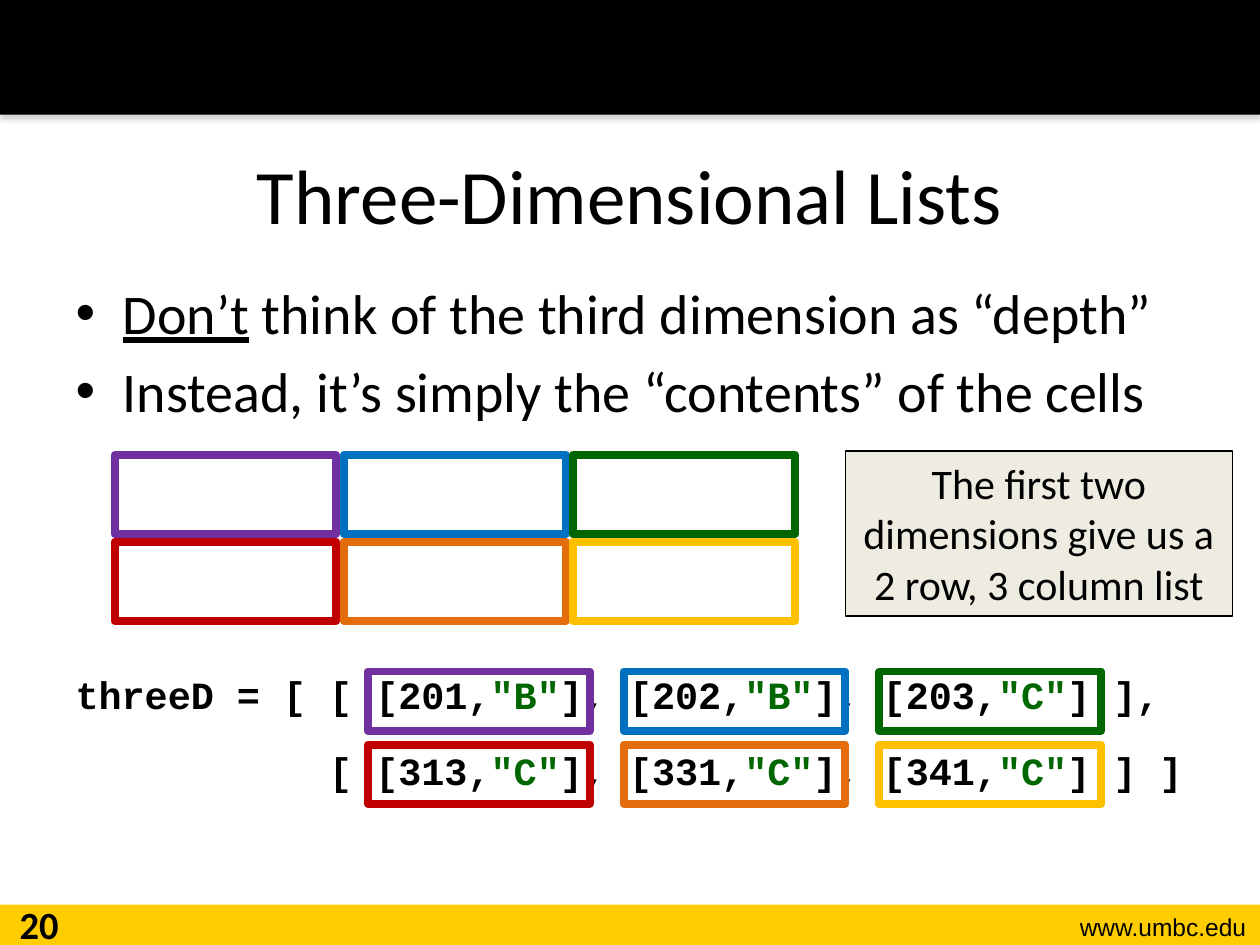
from lxml.etree import SubElement
from pptx import Presentation
from pptx.dml.color import RGBColor
from pptx.enum.shapes import MSO_SHAPE
from pptx.enum.text import MSO_ANCHOR, MSO_AUTO_SIZE, PP_ALIGN
from pptx.oxml import parse_xml
from pptx.oxml.ns import nsdecls, qn
from pptx.util import Inches, Pt

BLACK = RGBColor(0x00, 0x00, 0x00)
GOLD = RGBColor(0xFF, 0xCC, 0x00)
CREAM = RGBColor(0xEE, 0xEC, 0xE1)
GREEN = RGBColor(0x00, 0x66, 0x00)
HUES = [
    [RGBColor(0x70, 0x30, 0xA0), RGBColor(0x00, 0x70, 0xC0), GREEN],
    [RGBColor(0xC0, 0x00, 0x00), RGBColor(0xE4, 0x6C, 0x0A),
     RGBColor(0xFF, 0xC0, 0x00)],
]


def write(para, text, size=32, face="Calibri", hue=BLACK, bold=False,
          under=False, align=None):
    """Add one run of text to a paragraph."""
    run = para.add_run()
    run.text = text
    font = run.font
    font.size, font.name, font.bold = Pt(size), face, bold
    font.underline = under
    font.color.rgb = hue
    if align is not None:
        para.alignment = align


def block(left, top, wide, high, fill=None, line=None, width=4.5):
    """Draw a plain rectangle, sized in inches."""
    rect = slide.shapes.add_shape(MSO_SHAPE.RECTANGLE, Inches(left),
                                  Inches(top), Inches(wide), Inches(high))
    rect.shadow.inherit = False
    if fill is None:
        rect.fill.background()
    else:
        rect.fill.solid()
        rect.fill.fore_color.rgb = fill
    if line is None:
        rect.line.fill.background()
    else:
        rect.line.color.rgb = line
        rect.line.width = Pt(width)
    return rect


deck = Presentation()
deck.slide_width, deck.slide_height = Inches(10), Inches(7.5)
slide = deck.slides.add_slide(deck.slide_layouts[1])

# Bars at top and foot
block(0, 7.18, 10, 0.32, fill=GOLD)
head = block(0, 0, 10, 0.91, fill=BLACK)
glow = head._element.spPr.find(qn("a:effectLst"))
glow.append(parse_xml(
    f'<a:outerShdw {nsdecls("a")} blurRad="39370" dist="22860" dir="5400000" '
    'rotWithShape="0"><a:srgbClr val="808080"><a:alpha val="35000"/>'
    '</a:srgbClr></a:outerShdw>'))

# Page number and web address
for left, top, wide, high, text, look in [
    (0, 7.1, 0.62, 0.4, "20",
     dict(size=22, bold=True, align=PP_ALIGN.CENTER)),
    (8, 7.19, 1.99, 0.34, "www.umbc.edu",
     dict(size=14, face="Arial", align=PP_ALIGN.RIGHT)),
]:
    note = slide.shapes.add_textbox(Inches(left), Inches(top),
                                    Inches(wide), Inches(high))
    note.text_frame.word_wrap = True
    write(note.text_frame.paragraphs[0], text, **look)

# Title
title = slide.shapes.title
title.left, title.top = Inches(0.5), Inches(0.91)
title.width, title.height = Inches(9), Inches(1.25)
title.text_frame.vertical_anchor = MSO_ANCHOR.MIDDLE
write(title.text_frame.paragraphs[0], "Three-Dimensional Lists", size=44,
      align=PP_ALIGN.CENTER)

# Bullets
body = slide.placeholders[1]
body.left, body.top = Inches(0.5), Inches(2.16)
body.width, body.height = Inches(9.61), Inches(4.94)
frame = body.text_frame
frame.auto_size = MSO_AUTO_SIZE.NONE
first = frame.paragraphs[0]
first.space_before = Pt(0)
write(first, "Don’t", under=True)
write(first, " think of the third dimension as “depth”")
para = frame.add_paragraph()
para.space_before = Pt(6.4)
write(para, "Instead, it’s simply the “contents” of the cells")

# Code lines, with the quoted strings in green
for gap, code in [
    (141, 'threeD = [ [ [201,"B"], [202,"B"], [203,"C"] ],'),
    (17, '           [ [313,"C"], [331,"C"], [341,"C"] ] ]'),
]:
    para = frame.add_paragraph()
    para.space_before = Pt(gap)
    props = para._p.get_or_add_pPr()
    props.set("marL", "0")
    props.set("indent", "0")
    SubElement(props, qn("a:buNone"))
    for i, part in enumerate(code.split('"')):
        quote = i % 2 == 1
        write(para, f'"{part}"' if quote else part, size=22,
              face="Courier New", bold=True, hue=GREEN if quote else BLACK)

# Frames round the code items, then the matching grid of cells
for left, top, step, drop, high in [
    (2.92, 5.33, 2.03, 0.58, 0.47),
    (0.91, 3.61, 1.82, 0.69, 0.63),
]:
    for row, hues in enumerate(HUES):
        for col, hue in enumerate(hues):
            block(left + col * step, top + row * drop, 1.76, high, line=hue)

# Callout
call = block(6.71, 3.58, 3.07, 1.31, fill=CREAM, line=BLACK, width=0.75)
call.text_frame.word_wrap = True
call.text_frame.vertical_anchor = MSO_ANCHOR.TOP
write(call.text_frame.paragraphs[0],
      "The first two dimensions give us a 2 row, 3 column list",
      size=24, align=PP_ALIGN.CENTER)

deck.save("out.pptx")
